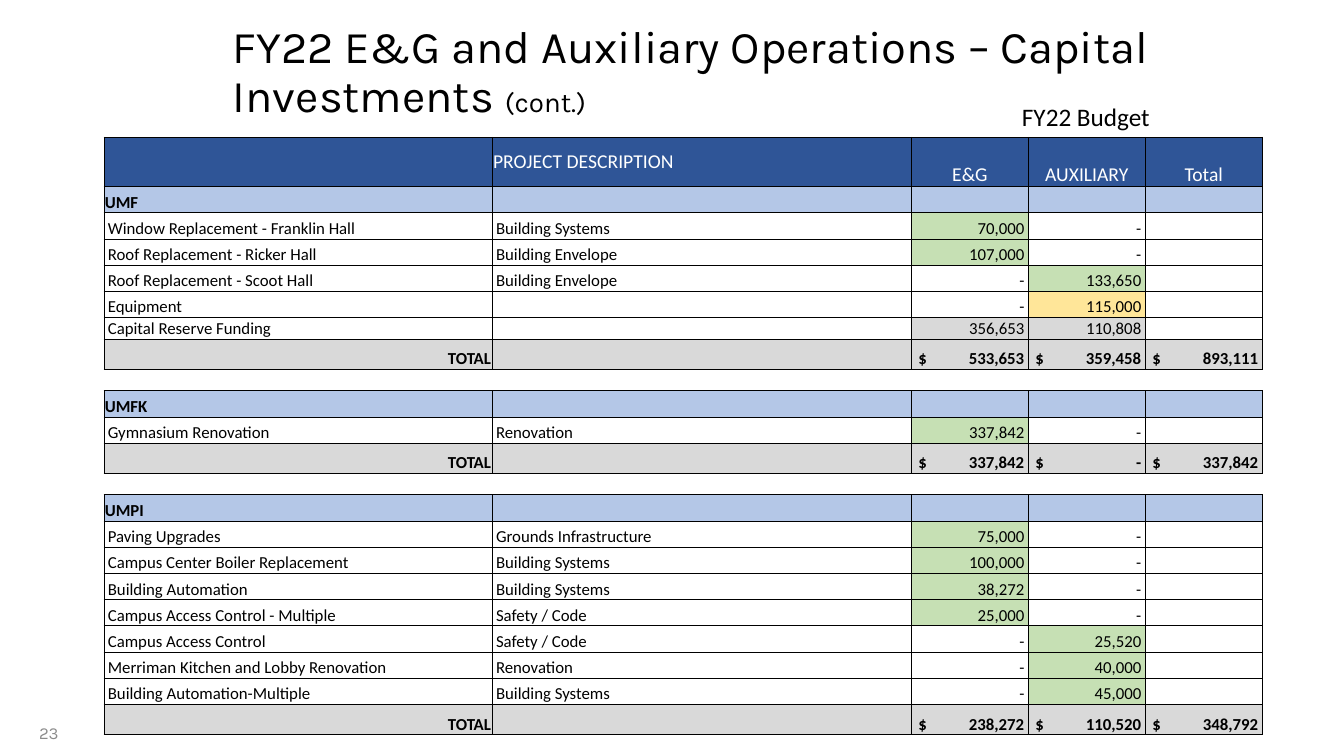
from lxml.etree import SubElement
from pptx import Presentation
from pptx.dml.color import RGBColor
from pptx.enum.text import MSO_ANCHOR as Anchor, MSO_AUTO_SIZE as AutoSize, PP_ALIGN as Align
from pptx.oxml import parse_xml
from pptx.oxml.ns import nsdecls, qn
from pptx.util import Inches, Pt

BLACK, WHITE, NAVY, BLUE = "000000", "FFFFFF", "2F5597", "B4C7E7"
GREEN, YELLOW, GRAY = "C6E0B4", "FFE699", "D9D9D9"


def style(paragraph, size, color=BLACK, name="Calibri", bold=False, align=Align.LEFT):
    paragraph.alignment = align
    font = paragraph.font
    font.size, font.name, font.bold = Pt(size), name, bold
    font.color.rgb = RGBColor.from_string(color)


def set_borders(cell, widths):
    for position, (side, width) in enumerate(zip("LRTB", widths)):
        paint = f'<a:solidFill><a:srgbClr val="{BLACK}"/></a:solidFill>' if width else "<a:noFill/>"
        line = parse_xml(f'<a:ln{side} {nsdecls("a")} w="{Pt(width)}">{paint}</a:ln{side}>')
        cell._tc.get_or_add_tcPr().insert(position, line)


campuses = [
    ("UMF", [
        ("Window Replacement - Franklin Hall", "Building Systems", "70,000", "-"),
        ("Roof Replacement - Ricker Hall", "Building Envelope", "107,000", "-"),
        ("Roof Replacement - Scoot Hall", "Building Envelope", "-", "133,650"),
        ("Equipment", "", "-", "115,000"),
        ("Capital Reserve Funding", "", "356,653", "110,808"),
    ], ("533,653", "359,458", "893,111")),
    ("UMFK", [
        ("Gymnasium Renovation", "Renovation", "337,842", "-"),
    ], ("337,842", "-", "337,842")),
    ("UMPI", [
        ("Paving Upgrades", "Grounds Infrastructure", "75,000", "-"),
        ("Campus Center Boiler Replacement", "Building Systems", "100,000", "-"),
        ("Building Automation", "Building Systems", "38,272", "-"),
        ("Campus Access Control - Multiple", "Safety / Code", "25,000", "-"),
        ("Campus Access Control", "Safety / Code", "-", "25,520"),
        ("Merriman Kitchen and Lobby Renovation", "Renovation", "-", "40,000"),
        ("Building Automation-Multiple", "Building Systems", "-", "45,000"),
    ], ("238,272", "110,520", "348,792")),
]
amount_fills = {"Equipment": YELLOW, "Capital Reserve Funding": GRAY}
row_heights = {"header": 0.49, "campus": 0.26, "project": 0.26, "total": 0.3, "gap": 0.21}
row_fills = {"header": NAVY, "campus": BLUE, "total": GRAY}
row_borders = {"total": (0.5, 0.5, 0.5, 1), "gap": (0, 0, 1, 0.5)}

rows = [("header", ("", "PROJECT DESCRIPTION", "E&G", "AUXILIARY", "Total"))]
for campus, projects, totals in campuses:
    if campus != campuses[0][0]:
        rows.append(("gap", ("",) * 5))
    rows.append(("campus", (campus, "", "", "", "")))
    rows += [("project", (*project, "")) for project in projects]
    rows.append(("total", ("TOTAL", "", *(f"$\t{total}" for total in totals))))

deck = Presentation()
deck.slide_width, deck.slide_height = Inches(13.33), Inches(7.5)
slide = deck.slides.add_slide(deck.slide_layouts[5])

title = slide.shapes.title
title.left, title.top, title.width, title.height = map(Inches, (2.21, 0.45, 11.12, 0.56))
title.text_frame.auto_size = AutoSize.NONE
title.text_frame.vertical_anchor = Anchor.MIDDLE
heading = title.text_frame.paragraphs[0]
heading.line_spacing = 0.9
for words, size in (("FY22 E&G and Auxiliary Operations – Capital Investments ", 32.4), ("(cont.)", 19.8)):
    run = heading.add_run()
    run.text = words
    run.font.size = Pt(size)
style(heading, 32.4, name="Karla")

column_widths = (3.85, 4.16, 1.16, 1.16, 1.16)
budget = slide.shapes.add_table(len(rows), 5, Inches(1.03), Inches(1.36), Inches(11.49), Inches(5.91)).table
budget.first_row = budget.horz_banding = False
for column, width in zip(budget.columns, column_widths):
    column.width = Inches(width)

for row_index, (kind, values) in enumerate(rows):
    height = 0.21 if values[0] == "Capital Reserve Funding" else row_heights[kind]
    budget.rows[row_index].height = Inches(height)
    for column_index, value in enumerate(values):
        cell = budget.cell(row_index, column_index)
        is_amount = column_index >= 2
        fill = row_fills.get(kind)
        if kind == "project" and is_amount and value not in ("", "-"):
            fill = amount_fills.get(values[0], GREEN)
        if fill:
            cell.fill.solid()
            cell.fill.fore_color.rgb = RGBColor.from_string(fill)
        else:
            cell.fill.background()
        set_borders(cell, row_borders.get(kind, (0.5,) * 4))

        side_margin = 0.04 if kind == "project" else 0.01
        cell.margin_left = Inches(0.07 if kind == "total" and is_amount else side_margin)
        cell.margin_right = Inches(side_margin)
        cell.margin_top, cell.margin_bottom = Inches(0.01), 0
        cell.vertical_anchor = Anchor.MIDDLE if value == "PROJECT DESCRIPTION" else Anchor.BOTTOM

        entry = cell.text_frame.paragraphs[0]
        if not value:
            SubElement(entry._p, qn("a:endParaRPr"), sz="1200")
            continue
        entry.text = value
        align = Align.LEFT
        if kind == "header" and is_amount:
            align = Align.CENTER
        elif value == "TOTAL" or kind == "project" and is_amount:
            align = Align.RIGHT
        elif kind == "total":
            tabs = SubElement(entry._p.get_or_add_pPr(), qn("a:tabLst"))
            SubElement(tabs, qn("a:tab"), pos=str(Inches(1.05)), algn="r")
        is_header = kind == "header"
        style(entry, 14 if is_header else 12, WHITE if is_header else BLACK,
              bold=kind in ("campus", "total"), align=align)

labels = [
    ("23", (0, 7.07, 0.68, 0.4), 12, "8C8C8C", "Karla", Align.RIGHT, Anchor.MIDDLE),
    ("FY22 Budget", (9.27, 0.96, 3, 0.4), 18, BLACK, "Calibri", Align.CENTER, Anchor.TOP),
]
for words, place, size, color, name, align, anchor in labels:
    label = slide.shapes.add_textbox(*map(Inches, place)).text_frame
    label.word_wrap = True
    label.vertical_anchor = anchor
    label.text = words
    style(label.paragraphs[0], size, color, name, align=align)

deck.save("out.pptx")
